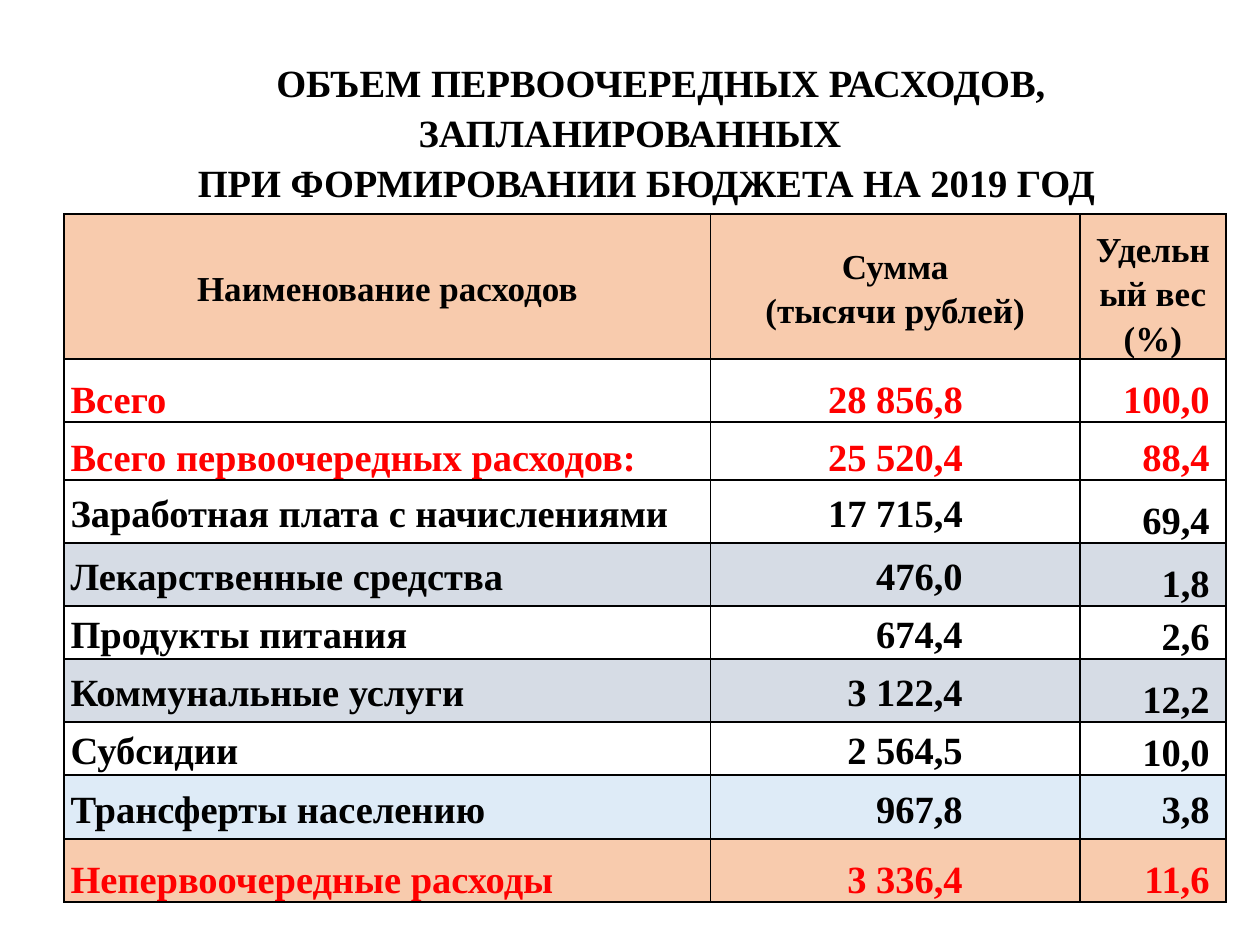
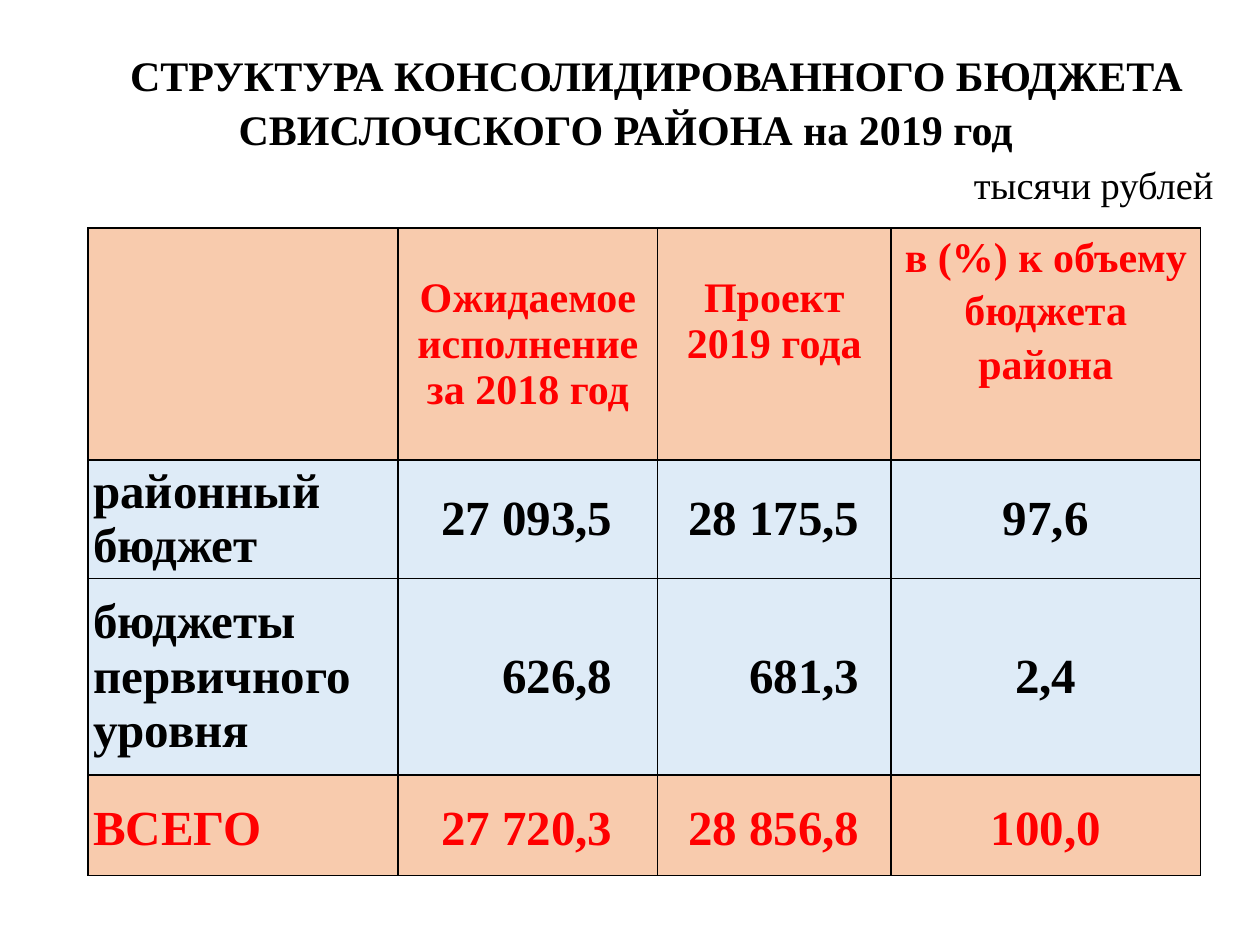
from dataclasses import dataclass

from lxml.etree import SubElement
from pptx import Presentation
from pptx.dml.color import RGBColor
from pptx.enum.text import MSO_ANCHOR, PP_ALIGN
from pptx.oxml.ns import qn
from pptx.util import Inches, Pt


@dataclass(frozen=True)
class Theme:
    font: str = "Times New Roman"
    black: str = "000000"
    red: str = "FF0000"
    peach: str = "F8CBAD"
    grey: str = "D6DCE5"
    blue: str = "DEEBF7"
    header_size: int = 20
    body_size: int = 22
    title_size: int = 24
    figure_size: int = 28
    table_spacing: float = 1.15
    title_spacing: float = 1.08
    border_width: int = 1


@dataclass(frozen=True)
class CellStyle:
    """Look of one table cell; lengths are in inches."""
    size: int
    color: str = "000000"
    fill: str | None = None
    anchor: MSO_ANCHOR = MSO_ANCHOR.MIDDLE
    align: PP_ALIGN = PP_ALIGN.CENTER
    spacing: float = 1.0
    side: float = 0.05
    right: float | None = None
    top: float = 0


@dataclass(frozen=True)
class TitleLine:
    text: str
    size: int
    indent: float = 0.49
    align: PP_ALIGN = PP_ALIGN.CENTER
    bold: bool = True
    before: int = 0


THEME = Theme()
LEFT, CENTER, RIGHT = PP_ALIGN.LEFT, PP_ALIGN.CENTER, PP_ALIGN.RIGHT
TOP, MIDDLE, BOTTOM = MSO_ANCHOR.TOP, MSO_ANCHOR.MIDDLE, MSO_ANCHOR.BOTTOM


def format_paragraph(paragraph, size, color, bold, align, spacing):
    paragraph.alignment = align
    paragraph.line_spacing = spacing
    font = paragraph.font
    font.name, font.size, font.bold = THEME.font, Pt(size), bold
    font.color.rgb = RGBColor.from_string(color)


def add_borders(cell):
    properties = cell._tc.get_or_add_tcPr()
    for position, side in enumerate(("lnL", "lnR", "lnT", "lnB")):
        line = SubElement(properties, qn(f"a:{side}"), w=str(Pt(THEME.border_width)))
        properties.insert(position, line)
        solid = SubElement(line, qn("a:solidFill"))
        SubElement(solid, qn("a:srgbClr"), val=THEME.black)


def fill_cell(cell, text, style):
    cell.vertical_anchor = style.anchor
    cell.margin_left = Inches(style.side)
    cell.margin_right = Inches(style.side if style.right is None else style.right)
    cell.margin_top, cell.margin_bottom = Inches(style.top), 0
    if style.fill:
        cell.fill.solid()
        cell.fill.fore_color.rgb = RGBColor.from_string(style.fill)
    else:
        cell.fill.background()
    add_borders(cell)
    cell.text = text
    for paragraph in cell.text_frame.paragraphs:
        format_paragraph(paragraph, style.size, style.color, True, style.align, style.spacing)


def add_budget_table(slide, box, widths, heights, rows):
    """Each row is a list of (text, style) pairs."""
    frame = slide.shapes.add_table(len(rows), len(widths), *map(Inches, box))
    table = frame.table
    table.first_row = table.horz_banding = False
    for column, width in zip(table.columns, widths):
        column.width = Inches(width)
    for row, height, contents in zip(table.rows, heights, rows):
        row.height = Inches(height)
        for cell, (text, style) in zip(row.cells, contents):
            fill_cell(cell, text, style)


def add_title(slide, box, lines):
    frame = slide.shapes.add_textbox(*map(Inches, box)).text_frame
    frame.word_wrap = True
    frame.vertical_anchor = TOP
    for number, line in enumerate(lines):
        paragraph = frame.add_paragraph() if number else frame.paragraphs[0]
        paragraph.text = line.text
        format_paragraph(paragraph, line.size, THEME.black, line.bold,
                         line.align, THEME.title_spacing)
        paragraph.space_before = Pt(line.before)
        paragraph._p.get_or_add_pPr().set("indent", str(Inches(line.indent)))


def build_expenses_slide(slide):
    spacing = THEME.table_spacing

    # Heading row
    def heading(anchor):
        return CellStyle(THEME.header_size, fill=THEME.peach, anchor=anchor, spacing=spacing)

    rows = [[("Наименование расходов", heading(MIDDLE)),
             ("Сумма\n(тысячи рублей)", heading(MIDDLE)),
             ("Удельный вес (%)", heading(BOTTOM))]]

    # Expense rows: name, sum, share, colour, fill, anchor of name and sum, anchor of share
    total = (THEME.red, None, BOTTOM, BOTTOM)
    plain = (THEME.black, None, MIDDLE, BOTTOM)
    banded = (THEME.black, THEME.grey, MIDDLE, BOTTOM)
    transfer = (THEME.black, THEME.blue, MIDDLE, MIDDLE)
    other = (THEME.red, THEME.peach, BOTTOM, BOTTOM)
    expenses = [
        ("Всего", "28 856,8", "100,0", total),
        ("Всего первоочередных расходов:", "25 520,4", "88,4", total),
        ("Заработная плата с начислениями", "17 715,4", "69,4", plain),
        ("Лекарственные средства", "476,0", "1,8", banded),
        ("Продукты питания", "674,4", "2,6", plain),
        ("Коммунальные услуги", "3 122,4", "12,2", banded),
        ("Субсидии", "2 564,5", "10,0", plain),
        ("Трансферты населению", "967,8", "3,8", transfer),
        ("Непервоочередные расходы", "3 336,4", "11,6", other),
    ]
    for name, amount, share, (color, fill, anchor, share_anchor) in expenses:
        def style(align, cell_anchor, right=None):
            return CellStyle(THEME.body_size, color, fill, cell_anchor, align, spacing, right=right)

        rows.append([(name, style(LEFT, anchor)),
                     (amount, style(RIGHT, anchor, 0.93)),
                     (share, style(RIGHT, share_anchor, 0.13))])

    add_budget_table(slide, (0.51, 1.7, 9.21, 5.47), (5.13, 2.93, 1.16),
                     (1.15, 0.5, 0.46, 0.5, 0.5, 0.42, 0.5, 0.42, 0.51, 0.5), rows)
    add_title(slide, (0, 0.39, 10, 1.25), [
        TitleLine("ОБЪЕМ ПЕРВООЧЕРЕДНЫХ РАСХОДОВ, ЗАПЛАНИРОВАННЫХ", THEME.body_size),
        TitleLine("ПРИ ФОРМИРОВАНИИ БЮДЖЕТА НА 2019 ГОД", THEME.body_size, indent=0.26),
    ])


def build_structure_slide(slide):
    # Heading row
    def heading(top=0.37, spacing=1.0):
        return CellStyle(THEME.title_size, THEME.red, THEME.peach, TOP,
                         spacing=spacing, side=0.04, top=top)

    rows = [[("", heading()),
             ("Ожидаемое исполнение за 2018 год", heading()),
             ("Проект 2019 года", heading()),
             ("в (%) к объему бюджета района", heading(0, THEME.table_spacing))]]

    # Budget levels and the total
    level = (THEME.black, THEME.blue, 1.0)
    total = (THEME.red, THEME.peach, THEME.table_spacing)
    budgets = [
        (("районный бюджет", "27 093,5", "28 175,5", "97,6"), level),
        (("бюджеты первичного уровня", "626,8", "681,3", "2,4"), level),
        (("ВСЕГО", "27 720,3", "28 856,8", "100,0"), total),
    ]
    columns = ((LEFT, None), (RIGHT, 0.36), (RIGHT, 0.25), (CENTER, None))
    for texts, (color, fill, spacing) in budgets:
        rows.append([(text, CellStyle(THEME.figure_size, color, fill, MIDDLE, align,
                                      spacing, side=0.04, right=right))
                     for text, (align, right) in zip(texts, columns)])

    add_budget_table(slide, (0.7, 1.81, 8.83, 5.13), (2.46, 2.06, 1.85, 2.46),
                     (1.84, 0.94, 1.56, 0.8), rows)
    add_title(slide, (0.2, 0.31, 9.53, 1.35), [
        TitleLine("СТРУКТУРА КОНСОЛИДИРОВАННОГО БЮДЖЕТА", THEME.title_size),
        TitleLine("СВИСЛОЧСКОГО РАЙОНА на 2019 год", THEME.title_size, indent=0),
        TitleLine("тысячи рублей", THEME.body_size, 0, RIGHT, bold=False, before=2),
    ])


def main():
    presentation = Presentation()
    presentation.slide_width, presentation.slide_height = Inches(10), Inches(7.5)
    blank = presentation.slide_layouts[6]
    for build in (build_expenses_slide, build_structure_slide):
        build(presentation.slides.add_slide(blank))
    presentation.save("out.pptx")


if __name__ == "__main__":
    main()
